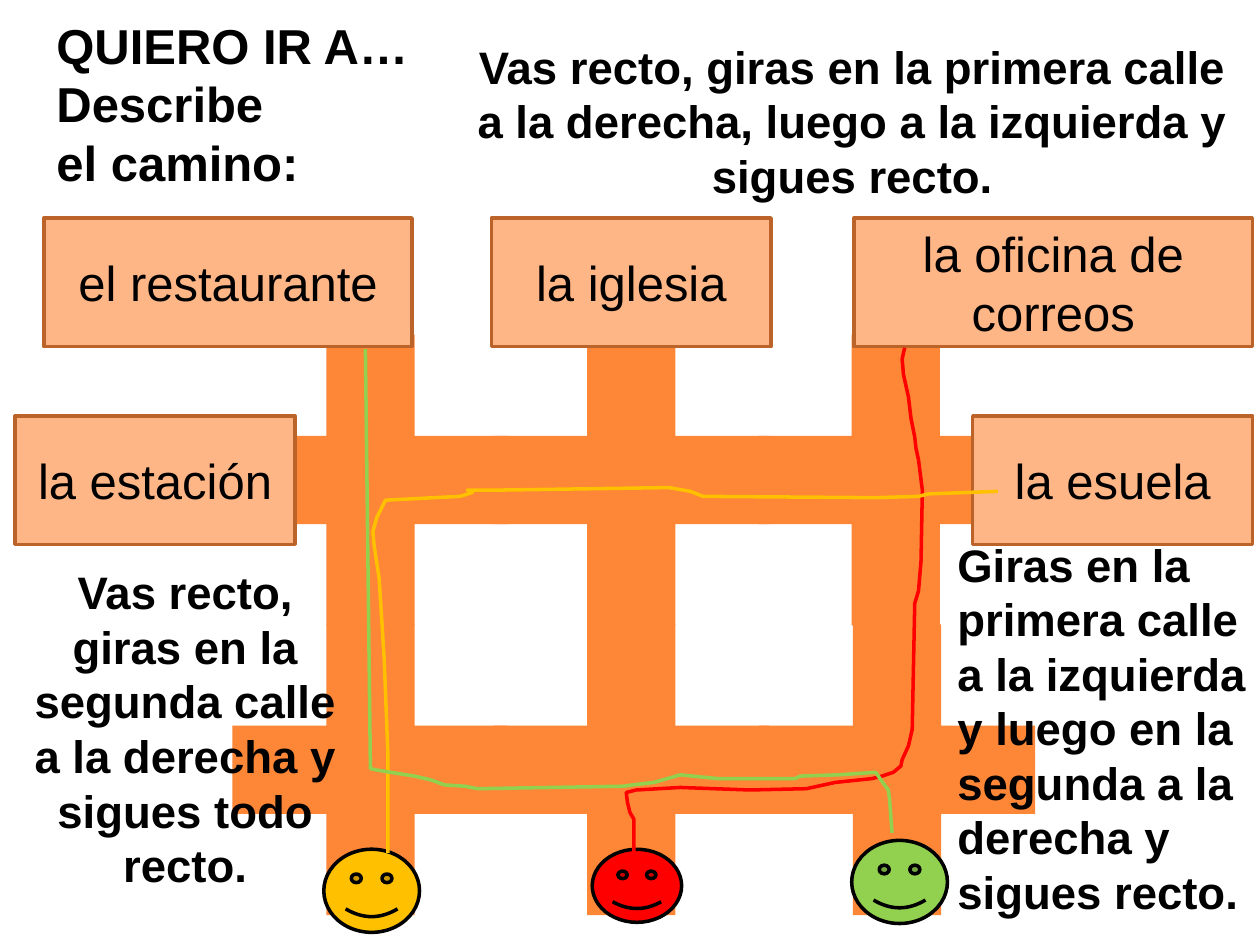
from pptx import Presentation
from pptx.dml.color import RGBColor
from pptx.enum.shapes import MSO_SHAPE
from pptx.enum.text import MSO_ANCHOR, MSO_AUTO_SIZE, PP_ALIGN
from pptx.util import Pt

PX = 9144
COLORS = {
    "street": "FE8637", "place": "FEB687", "border": "BC6329", "ink": "000000",
    "red": "FF0000", "yellow": "FFC000", "green": "92D050",
}

deck = Presentation()
deck.slide_width, deck.slide_height = 1000 * PX, 750 * PX
page = deck.slides.add_slide(deck.slide_layouts[6])


def add_shape(kind, bounds, fill, line=None):
    shape = page.shapes.add_shape(kind, *[value * PX for value in bounds])
    shape.shadow.inherit = False
    shape.fill.solid()
    shape.fill.fore_color.rgb = RGBColor.from_string(COLORS[fill])
    if line:
        shape.line.color.rgb = RGBColor.from_string(COLORS[line])
        shape.line.width = Pt(2)
    else:
        shape.line.fill.background()
    return shape


def write(shape, text, size, align, bold=False):
    frame = shape.text_frame
    frame.word_wrap = True
    frame.text = text
    for para in frame.paragraphs:
        para.alignment = align
        for span in para.runs:
            span.font.name = "Arial"
            span.font.size = Pt(size)
            span.font.bold = bold
            span.font.color.rgb = RGBColor.from_string(COLORS["ink"])


crossings = [(352, 454), (145, 454), (563, 454), (145, 224), (352, 224), (562, 224)]
for left, top in crossings:
    add_shape(MSO_SHAPE.MATH_PLUS, (left, top, 298, 314), "street")

places = [
    ("la esuela", 772, 330, 222),
    ("el restaurante", 35, 173, 292),
    ("la iglesia", 390, 173, 222),
    ("la oficina de correos", 678, 173, 316),
    ("la estación", 12, 330, 222),
]
for name, left, top, width in places:
    box = add_shape(MSO_SHAPE.RECTANGLE, (left, top, width, 102), "place", "border")
    box.text_frame.vertical_anchor = MSO_ANCHOR.MIDDLE
    write(box, name, 28, PP_ALIGN.CENTER)

faces = [
    ("red", (470, 674, 71, 58)),
    ("yellow", (257, 674, 76, 66)),
    ("green", (676, 667, 76, 66)),
]
for color, bounds in faces:
    add_shape(MSO_SHAPE.SMILEY_FACE, bounds, color, "ink")

texts = [
    ("Vas recto, giras en la primera calle a la derecha, luego a la izquierda y sigues recto.",
     (366, 26, 621, 141), 26, PP_ALIGN.CENTER),
    ("QUIERO IR A…\nDescribe\nel camino:", (35, 7, 370, 229), 28, PP_ALIGN.LEFT),
    ("Vas recto, giras en la segunda calle a la derecha y sigues todo recto.",
     (13, 443, 268, 273), 26, PP_ALIGN.CENTER),
    ("Giras en la primera calle a la izquierda y luego en la segunda a la derecha y sigues recto.",
     (750, 421, 266, 316), 26, PP_ALIGN.LEFT),
]
for text, bounds, size, align in texts:
    box = page.shapes.add_textbox(*[value * PX for value in bounds])
    write(box, text, size, align, bold=True)
    box.text_frame.auto_size = MSO_AUTO_SIZE.SHAPE_TO_FIT_TEXT

routes = {
    "red": [
        (718, 276), (716, 285), (717, 297), (719, 306), (721, 315), (723, 332),
        (726, 347), (727, 356), (729, 365), (731, 381), (732, 389), (731, 445),
        (729, 469), (726, 479), (724, 579), (721, 592), (716, 603), (715, 608),
        (709, 613), (700, 616), (692, 618), (663, 621), (640, 626), (595, 627),
        (540, 625), (505, 627), (497, 629), (498, 637), (500, 645), (503, 650),
        (503, 677),
    ],
    "yellow": [
        (792, 390), (737, 392), (729, 394), (695, 395), (558, 394), (548, 390),
        (531, 387), (397, 389), (371, 389), (375, 391), (365, 394), (306, 397),
        (299, 411), (296, 422), (297, 433), (301, 459), (305, 523), (308, 600),
        (308, 677),
    ],
    "green": [
        (290, 277), (294, 610), (298, 611), (310, 613), (329, 616), (342, 619),
        (353, 623), (369, 624), (379, 626), (495, 624), (502, 623), (519, 621),
        (540, 615), (570, 618), (631, 618), (635, 616), (665, 615), (695, 613),
        (702, 623), (705, 627), (706, 634), (708, 661),
    ],
}
for color, points in routes.items():
    builder = page.shapes.build_freeform(*points[0], scale=PX)
    builder.add_line_segments(points[1:], close=False)
    route = builder.convert_to_shape()
    route.shadow.inherit = False
    route.fill.background()
    route.line.color.rgb = RGBColor.from_string(COLORS[color])
    route.line.width = Pt(2)

deck.save("out.pptx")
